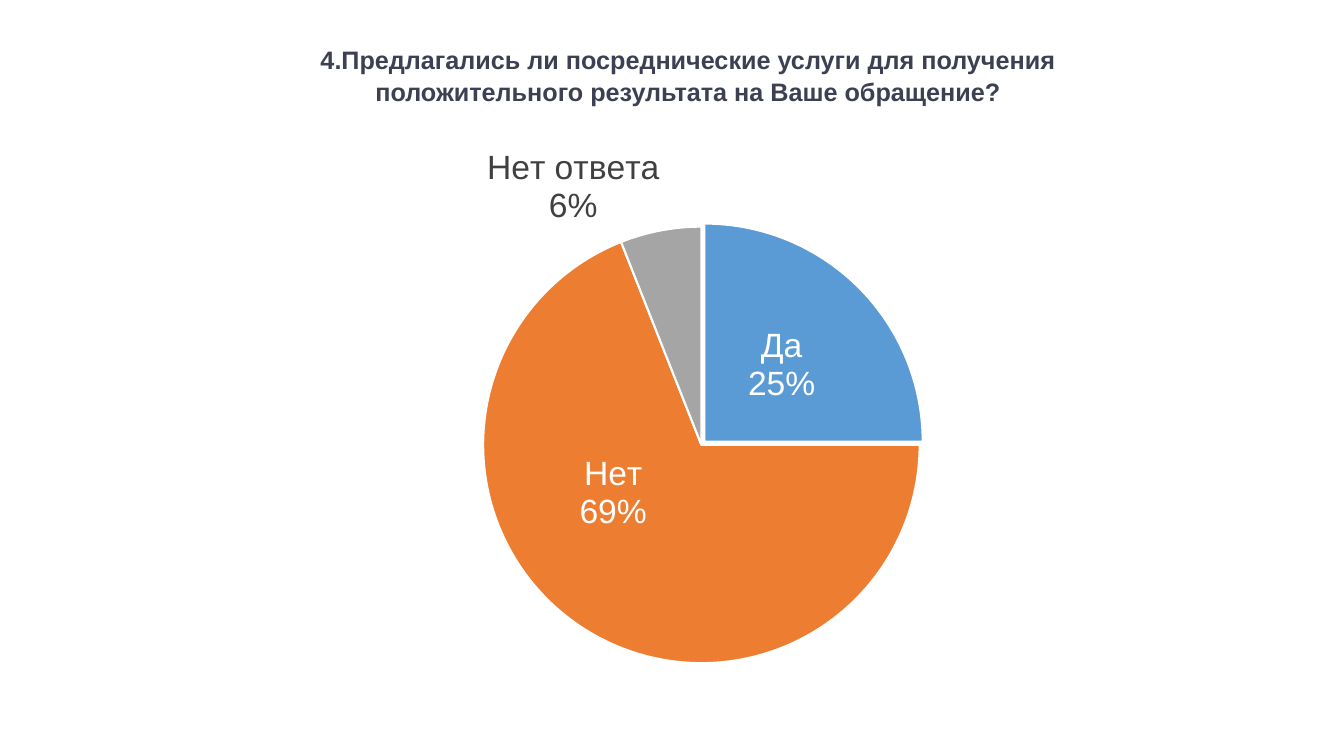
from lxml.etree import SubElement
from pptx import Presentation
from pptx.chart.data import CategoryChartData
from pptx.dml.color import RGBColor
from pptx.enum.chart import XL_CHART_TYPE, XL_LABEL_POSITION
from pptx.enum.text import MSO_ANCHOR, MSO_AUTO_SIZE, PP_ALIGN
from pptx.oxml.ns import qn
from pptx.util import Pt

EMU_PER_PX = 914400 / 100.8
FONT = "Arial"
WHITE = RGBColor(0xFF, 0xFF, 0xFF)
TITLE_INK = RGBColor(0x3C, 0x40, 0x52)
LABEL_INK = RGBColor(0x40, 0x40, 0x40)
BLUE = RGBColor(0x5B, 0x9B, 0xD5)
ORANGE = RGBColor(0xED, 0x7D, 0x31)
GREY = RGBColor(0xA5, 0xA5, 0xA5)

QUESTION = ("4.Предлагались ли посреднические услуги для получения "
            "положительного результата на Ваше обращение?")
# Answer, percent, slice colour, label colour, label position
ANSWERS = [
    ("Да", 25, BLUE, WHITE, XL_LABEL_POSITION.CENTER),
    ("Нет", 69, ORANGE, WHITE, XL_LABEL_POSITION.CENTER),
    ("Нет ответа", 6, GREY, LABEL_INK, XL_LABEL_POSITION.OUTSIDE_END),
]


def px(length):
    return round(length * EMU_PER_PX)


def style_font(font, size, color, bold=False):
    font.name = FONT
    font.size = Pt(size)
    font.bold = bold
    font.color.rgb = color


def add_question(slide, text, left, top, width, height):
    title = slide.shapes.title
    title.left, title.top = px(left), px(top)
    title.width, title.height = px(width), px(height)
    frame = title.text_frame
    frame.word_wrap = True
    frame.auto_size = MSO_AUTO_SIZE.SHAPE_TO_FIT_TEXT
    frame.vertical_anchor = MSO_ANCHOR.TOP
    paragraph = frame.paragraphs[0]
    paragraph.alignment = PP_ALIGN.CENTER
    paragraph.line_spacing = 1.07
    paragraph.space_before = Pt(0)
    run = paragraph.add_run()
    run.text = text
    style_font(run.font, 18, TITLE_INK, bold=True)


def manual_layout(**settings):
    """Settings are the children of c:manualLayout, in schema order."""
    def fill(layout):
        manual = SubElement(layout, qn("c:manualLayout"))
        for tag, value in settings.items():
            SubElement(manual, qn(f"c:{tag}")).set("val", str(value))
    return fill


def place_plot(chart, x, y, w, h):
    plot_area = chart.plots[0]._element.getparent()
    layout = plot_area.find(qn("c:layout"))
    if layout is None:
        layout = SubElement(plot_area, qn("c:layout"))
        plot_area.insert(0, layout)
    manual_layout(layoutTarget="inner", xMode="edge", yMode="edge",
                  x=x, y=y, w=w, h=h)(layout)


def shift_label(label_xml, x, y):
    layout = SubElement(label_xml, qn("c:layout"))
    label_xml.find(qn("c:idx")).addnext(layout)
    manual_layout(x=x, y=y)(layout)


def show_name_and_percent(label_xml):
    for tag, shown in (("showVal", 0), ("showCatName", 1), ("showPercent", 1)):
        label_xml.find(qn(f"c:{tag}")).set("val", str(shown))
    separator = SubElement(label_xml, qn("c:separator"))
    separator.text = "\n"
    label_xml.find(qn("c:showBubbleSize")).addnext(separator)


def add_answer_pie(slide, left, top, width, height):
    data = CategoryChartData(number_format="0")
    data.categories = [answer[0] for answer in ANSWERS]
    data.add_series("Series 1", [answer[1] for answer in ANSWERS])
    chart = slide.shapes.add_chart(XL_CHART_TYPE.PIE, px(left), px(top),
                                   px(width), px(height), data).chart
    chart.has_legend = False
    chart.has_title = False
    style_font(chart.font, 24, LABEL_INK)
    pie = chart.plots[0]
    pie.vary_by_categories = True
    series = pie.series[0]

    # Labels shared by all slices
    labels = series.data_labels
    labels.number_format = "0%"
    labels.number_format_is_linked = False
    style_font(labels.font, 24, LABEL_INK)
    show_name_and_percent(labels._element)

    # Slices and their own labels
    for index, (_, _, color, ink, position) in enumerate(ANSWERS):
        point = series.points[index]
        point.format.fill.solid()
        point.format.fill.fore_color.rgb = color
        point.format.line.color.rgb = WHITE
        point.format.line.width = Pt(1.5)
        style_font(point.data_label.font, 24, ink)
        point.data_label.position = position
    label_xmls = labels._element.findall(qn("c:dLbl"))
    for label_xml in label_xmls:
        show_name_and_percent(label_xml)
    shift_label(label_xmls[1], -0.03, -0.07)

    # The first slice stands slightly apart
    explosion = SubElement(series._element, qn("c:explosion"))
    explosion.set("val", "2")
    series._element.find(qn("c:dPt")).find(qn("c:spPr")).addprevious(explosion)

    place_plot(chart, 0.27, 0.15, 0.49, 0.73)


def main():
    deck = Presentation()
    deck.slide_width, deck.slide_height = px(1344), px(756)
    slide = deck.slides.add_slide(deck.slide_layouts[5])
    add_question(slide, QUESTION, 223, 37, 930, 76)
    add_answer_pie(slide, 240, 137, 896, 598)
    deck.save("out.pptx")


if __name__ == "__main__":
    main()
